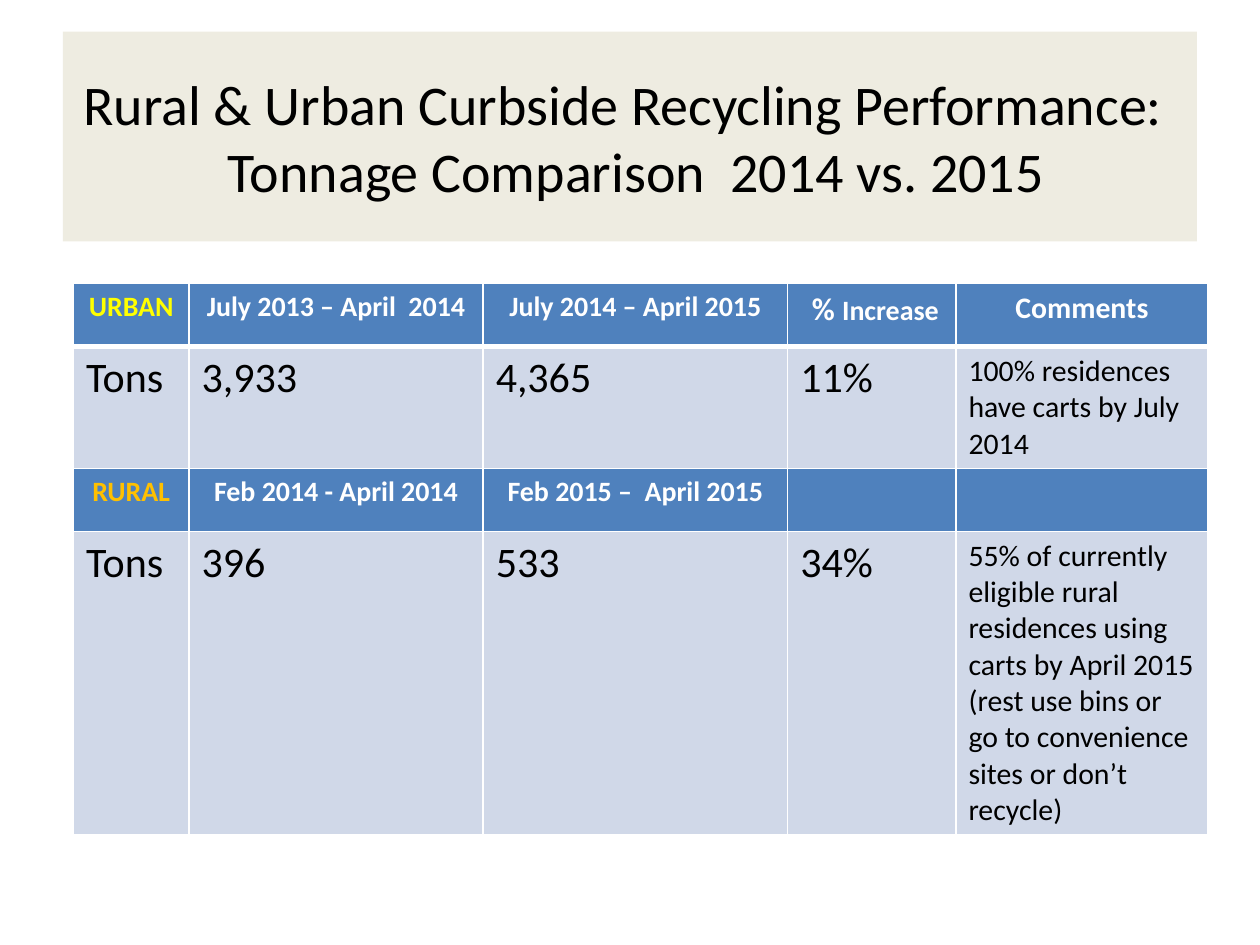
from lxml import etree
from pptx import Presentation
from pptx import util as u
from pptx.dml.color import RGBColor
from pptx.enum import shapes, text
from pptx.oxml.ns import qn

BLACK = RGBColor(0x00, 0x00, 0x00)
WHITE = RGBColor(0xFF, 0xFF, 0xFF)
YELLOW = RGBColor(0xFF, 0xFF, 0x00)
ORANGE = RGBColor(0xFF, 0xC0, 0x00)
BLUE = RGBColor(0x4F, 0x81, 0xBD)
PALE_BLUE = RGBColor(0xD0, 0xD8, 0xE8)
CREAM = RGBColor(0xEE, 0xEC, 0xE1)

TITLE = ["Rural & Urban Curbside Recycling Performance: ",
         " Tonnage Comparison  2014 vs. 2015"]

# Each cell is a list of (text, size) runs.
ROWS = [
    [[("URBAN", 16)], [("July 2013 – April  2014", 16)], [("July 2014 – April 2015", 16)],
     [(" % ", 18), ("Increase", 16)], [("Comments", 17)]],
    [[("Tons", 24)], [("3,933", 24)], [("4,365", 24)], [("11%", 24)],
     [("100% residences have carts by July 2014", 17)]],
    [[("RURAL", 16)], [("Feb 2014 - April 2014", 16)], [("Feb 2015 –  April 2015", 16)], [], []],
    [[("Tons", 24)], [("396", 24)], [("533", 24)], [("34%", 24)],
     [("55% of currently eligible rural residences using carts by April 2015 "
       "(rest use bins or go to convenience sites or don’t recycle)", 17)]],
]
LABEL_COLORS = {0: YELLOW, 2: ORANGE}  # heading rows and the colour of their first cell
COLUMN_WIDTHS = [2.33, 5.93, 6.14, 3.39, 5.08]
ROW_HEIGHTS = [1.27, 2.45, 1.27, 6.1]


def add_run(paragraph, words, size, color, bold=False):
    run = paragraph.add_run()
    run.text = words
    run.font.color.rgb = color
    for name, value in {"name": "Calibri", "size": u.Pt(size), "bold": bold}.items():
        setattr(run.font, name, value)


def set_borders(cell, widths):
    """Draw white cell borders; widths maps L, R, T and B to points."""
    properties = cell._tc.get_or_add_tcPr()
    for side, width in widths.items():
        line = etree.SubElement(properties, qn(f"a:ln{side}"), w=str(u.Pt(width)))
        fill = etree.SubElement(line, qn("a:solidFill"))
        etree.SubElement(fill, qn("a:srgbClr"), val=str(WHITE))


def add_title(slide):
    shape = slide.shapes.add_shape(shapes.MSO_SHAPE.RECTANGLE,
                                   u.Cm(1.27), u.Cm(0.64), u.Cm(22.86), u.Cm(4.23))
    shape.shadow.inherit = False
    shape.fill.solid()
    shape.fill.fore_color.rgb = CREAM
    shape.line.fill.background()
    frame = shape.text_frame
    frame.word_wrap = True
    frame.vertical_anchor = text.MSO_ANCHOR.MIDDLE
    paragraph = frame.paragraphs[0]
    paragraph.alignment = text.PP_ALIGN.CENTER
    for number, line in enumerate(TITLE):
        if number:
            paragraph.add_line_break()
        add_run(paragraph, line, 32, BLACK)


def add_tonnage_table(slide):
    table = slide.shapes.add_table(len(ROWS), len(COLUMN_WIDTHS), u.Cm(1.48), u.Cm(5.72),
                                   u.Cm(sum(COLUMN_WIDTHS)), u.Cm(sum(ROW_HEIGHTS))).table
    for column, width in zip(table.columns, COLUMN_WIDTHS):
        column.width = u.Cm(width)
    for row, height in zip(table.rows, ROW_HEIGHTS):
        row.height = u.Cm(height)

    for r, row in enumerate(ROWS):
        heading = r in LABEL_COLORS
        borders = {"L": 1, "R": 1, "T": 3 if r == 1 else 1, "B": 3 if r == 0 else 1}
        for c, runs in enumerate(row):
            cell = table.cell(r, c)
            set_borders(cell, borders)
            cell.fill.solid()
            cell.fill.fore_color.rgb = BLUE if heading else PALE_BLUE
            paragraph = cell.text_frame.paragraphs[0]
            color = BLACK
            if heading:
                paragraph.alignment = text.PP_ALIGN.CENTER
                color = LABEL_COLORS[r] if c == 0 else WHITE
            for words, size in runs:
                add_run(paragraph, words, size, color, heading)


def main():
    presentation = Presentation()
    presentation.slide_width, presentation.slide_height = u.Cm(25.4), u.Cm(19.05)
    slide = presentation.slides.add_slide(presentation.slide_layouts[6])
    add_title(slide)
    add_tonnage_table(slide)
    presentation.save("out.pptx")


if __name__ == "__main__":
    main()
